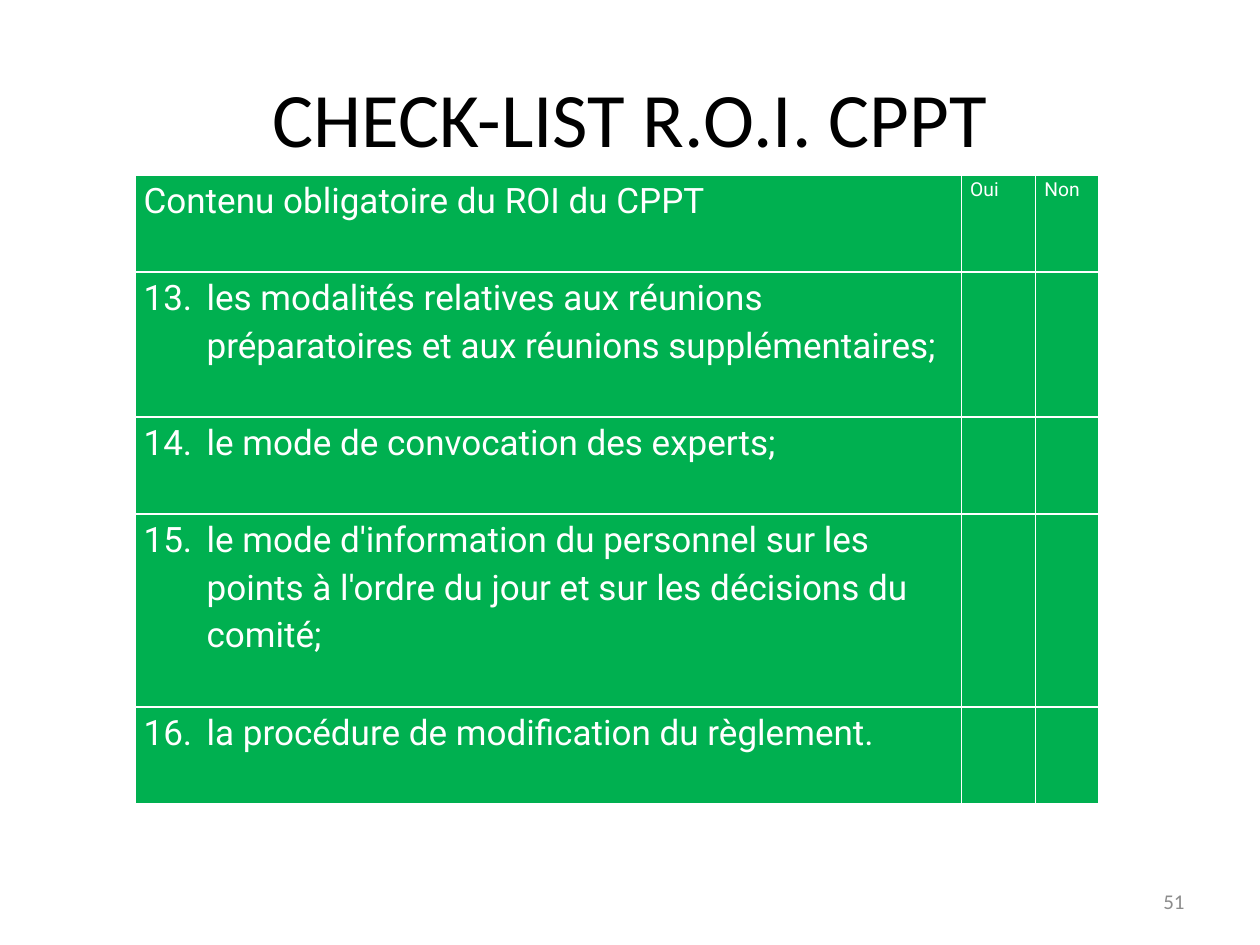
"""Build the CPPT check-list slide with its table of mandatory contents."""
from lxml.etree import SubElement
from pptx import Presentation
from pptx.dml.color import RGBColor
from pptx.enum.text import MSO_ANCHOR, PP_ALIGN
from pptx.oxml.ns import qn
from pptx.util import Inches, Pt

COLORS = {"title": "000000", "green": "00B050", "white": "FFFFFF", "grey": "8C8C8C"}
HEADS = ["Contenu obligatoire du ROI du CPPT", "Oui", "Non"]
ITEMS = [
    "les modalités relatives aux réunions préparatoires et aux réunions supplémentaires;",
    "le mode de convocation des experts;",
    "le mode d'information du personnel sur les points à l'ordre du jour et sur les décisions du comité;",
    "la procédure de modification du règlement.",
]
WIDTHS = [6.56, 0.59, 0.5]
HEIGHTS = [0.77, 1.15, 0.77, 1.53, 0.77]
FIRST = 13


def write(para, text, size, face, color):
    run = para.add_run()
    run.text = text
    for name, value in {"size": Pt(size), "name": face}.items():
        setattr(run.font, name, value)
    run.font.color.rgb = RGBColor.from_string(COLORS[color])


def style(cell):
    props = cell._tc.get_or_add_tcPr()
    for side in ("lnL", "lnR", "lnT", "lnB"):
        line = SubElement(props, qn(f"a:{side}"), w=str(Pt(1)))
        SubElement(SubElement(line, qn("a:solidFill")), qn("a:srgbClr"), val=COLORS["white"])
    cell.fill.solid()
    cell.fill.fore_color.rgb = RGBColor.from_string(COLORS["green"])
    margins = {"margin_left": 0.07, "margin_top": 0, "margin_right": 0.07, "margin_bottom": 0}
    for name, value in margins.items():
        setattr(cell, name, Inches(value))


deck = Presentation()
deck.slide_width, deck.slide_height = Inches(10), Inches(7.5)
slide = deck.slides.add_slide(deck.slide_layouts[5])

title = slide.shapes.title
for name, value in {"left": 0.5, "top": 0.3, "width": 9, "height": 1.25}.items():
    setattr(title, name, Inches(value))
title.text_frame.vertical_anchor = MSO_ANCHOR.MIDDLE
para = title.text_frame.paragraphs[0]
para.alignment = PP_ALIGN.CENTER
write(para, "CHECK-LIST R.O.I. CPPT", 44, "Calibri", "title")

table = slide.shapes.add_table(
    len(HEIGHTS), len(WIDTHS), Inches(1.07), Inches(1.39),
    Inches(sum(WIDTHS)), Inches(sum(HEIGHTS)),
).table
for col, width in zip(table.columns, WIDTHS):
    col.width = Inches(width)
for row, height in zip(table.rows, HEIGHTS):
    row.height = Inches(height)
for cell in table.iter_cells():
    style(cell)

for col, (text, size) in enumerate(zip(HEADS, [20, 11, 11])):
    para = table.cell(0, col).text_frame.paragraphs[0]
    para.line_spacing = 1.15
    para.font.bold = False
    write(para, text, size, "Roboto", "white")
    para.runs[0].font.bold = False

for row, text in enumerate(ITEMS, 1):
    para = table.cell(row, 0).text_frame.paragraphs[0]
    para.line_spacing = 1.15
    para.space_after = Pt(10)
    props = para._p.get_or_add_pPr()
    props.set("marL", str(Inches(0.5)))
    props.set("indent", str(-Inches(0.5)))
    SubElement(props, qn("a:buFont"), typeface="+mj-lt")
    SubElement(props, qn("a:buAutoNum"), type="arabicPeriod", startAt=str(FIRST + row - 1))
    SubElement(SubElement(props, qn("a:tabLst")), qn("a:tab"), pos=str(Inches(0.5)), algn="l")
    write(para, text, 20, "Roboto", "white")

box = slide.shapes.add_textbox(Inches(7.17), Inches(6.95), Inches(2.33), Inches(0.4))
box.text_frame.word_wrap = True
box.text_frame.vertical_anchor = MSO_ANCHOR.MIDDLE
para = box.text_frame.paragraphs[0]
para.alignment = PP_ALIGN.RIGHT
write(para, "51", 12, "Calibri", "grey")

deck.save("out.pptx")
